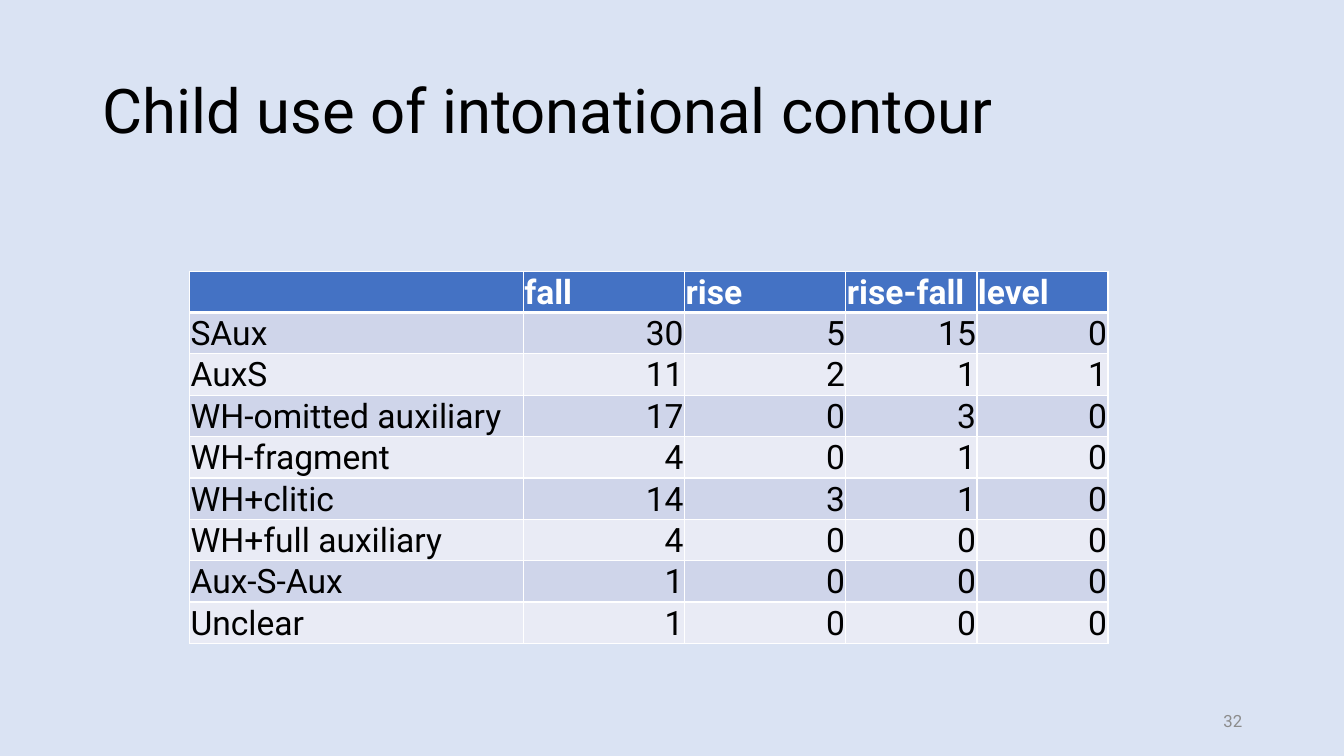
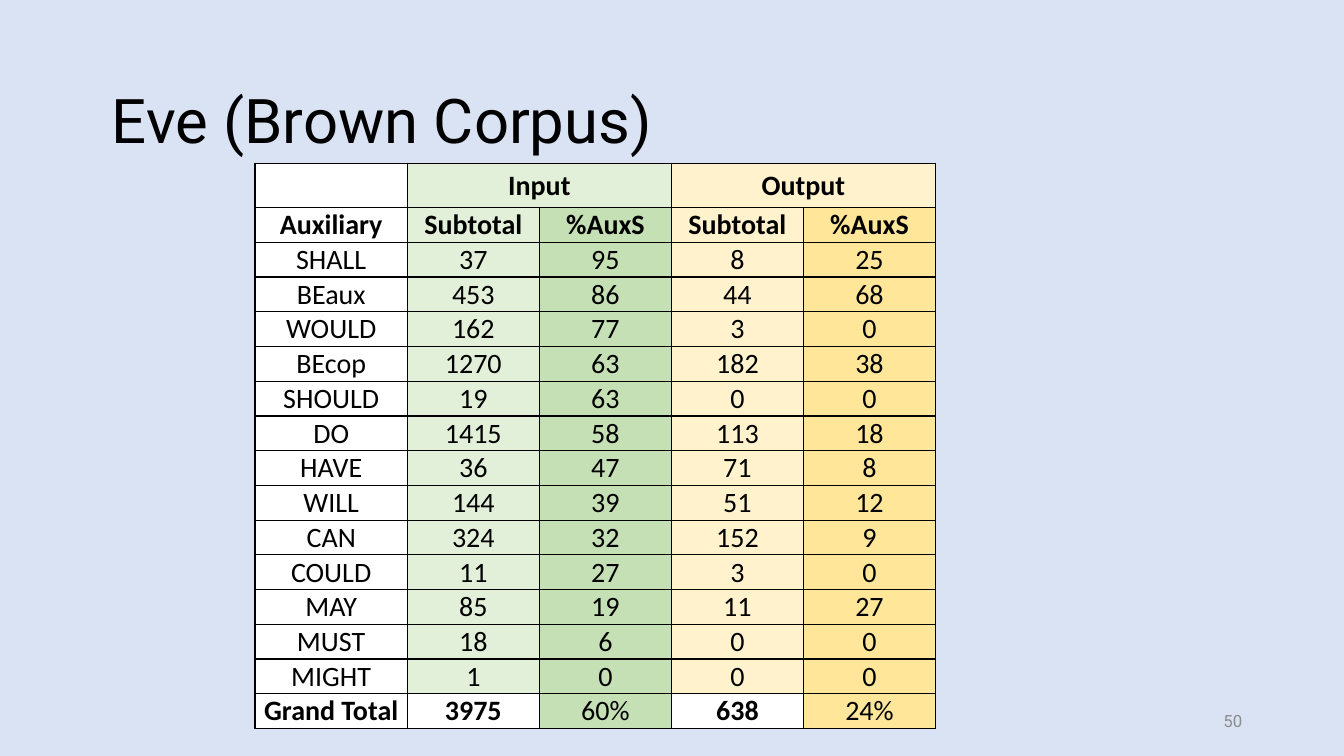
from lxml import etree
from pptx import Presentation
from pptx.dml.color import RGBColor
from pptx.enum.text import MSO_ANCHOR as ANCHOR, MSO_AUTO_SIZE as AUTO, PP_ALIGN as ALIGN
from pptx.oxml.ns import qn
from pptx.util import Inches, Pt

BLACK = RGBColor(0x00, 0x00, 0x00)
WHITE = RGBColor(0xFF, 0xFF, 0xFF)
GREY = RGBColor(0x8C, 0x8C, 0x8C)
SKY = RGBColor(0xDA, 0xE3, 0xF3)
BLUE = RGBColor(0x44, 0x72, 0xC4)
BAND_DARK = RGBColor(0xCF, 0xD5, 0xEA)
BAND_LIGHT = RGBColor(0xE9, 0xEB, 0xF5)
GREEN_LIGHT = RGBColor(0xE2, 0xF0, 0xD9)
GREEN = RGBColor(0xC5, 0xE0, 0xB4)
GOLD_LIGHT = RGBColor(0xFF, 0xF2, 0xCC)
GOLD = RGBColor(0xFF, 0xE6, 0x99)

CONTOURS = [
    ("", "fall", "rise", "rise-fall", "level"),
    ("SAux", 30, 5, 15, 0),
    ("AuxS", 11, 2, 1, 1),
    ("WH-omitted auxiliary", 17, 0, 3, 0),
    ("WH-fragment", 4, 0, 1, 0),
    ("WH+clitic", 14, 3, 1, 0),
    ("WH+full auxiliary", 4, 0, 0, 0),
    ("Aux-S-Aux", 1, 0, 0, 0),
    ("Unclear", 1, 0, 0, 0),
]
AUXILIARIES = [
    ("", "Input", "", "Output", ""),
    ("Auxiliary", "Subtotal", "%AuxS", "Subtotal", "%AuxS"),
    ("SHALL", 37, 95, 8, 25),
    ("BEaux", 453, 86, 44, 68),
    ("WOULD", 162, 77, 3, 0),
    ("BEcop", 1270, 63, 182, 38),
    ("SHOULD", 19, 63, 0, 0),
    ("DO", 1415, 58, 113, 18),
    ("HAVE", 36, 47, 71, 8),
    ("WILL", 144, 39, 51, 12),
    ("CAN", 324, 32, 152, 9),
    ("COULD", 11, 27, 3, 0),
    ("MAY", 85, 19, 11, 27),
    ("MUST", 18, 6, 0, 0),
    ("MIGHT", 1, 0, 0, 0),
    ("Grand Total", 3975, "60%", 638, "24%"),
]


def add_text(tf, text, font, size, color, align, bold=False):
    p = tf.paragraphs[0]
    p.alignment = align
    if text != "":
        r = p.add_run()
        r.text = str(text)
        r.font.name, r.font.size, r.font.bold = font, Pt(size), bold
        r.font.color.rgb = color
    return p


def style_cell(cell, fill, line, top=1, bottom=1):
    tcPr = cell._tc.get_or_add_tcPr()
    for side, width in (("L", 1), ("R", 1), ("T", top), ("B", bottom)):
        ln = etree.SubElement(tcPr, qn("a:ln" + side), w=str(Pt(width)))
        solid = etree.SubElement(ln, qn("a:solidFill"))
        etree.SubElement(solid, qn("a:srgbClr"), val=str(line))
    cell.fill.solid()
    cell.fill.fore_color.rgb = fill


prs = Presentation()
prs.slide_width, prs.slide_height = Inches(13.33), Inches(7.5)
bg = prs.slide_master.background.fill
bg.solid()
bg.fore_color.rgb = SKY

# Slides with title, page number and an empty table
tables = []
for title, x, y, number, data, at, widths, heights in (
    ("Child use of intonational contour", 0.92, 0.4, 32, CONTOURS,
     (1.88, 2.69), (3.31, 1.6, 1.6, 1.3, 1.3), [0.4] * 9),
    ("Eve (Brown Corpus)", 1.01, 0.5, 50, AUXILIARIES,
     (2.53, 1.62), [1.51] + [1.31] * 4, [0.44] + [5.17 / 15] * 15),
):
    s = prs.slides.add_slide(prs.slide_layouts[5])
    sp = s.shapes.title
    sp.left, sp.top, sp.width, sp.height = map(Inches, (x, y, 11.5, 1.45))
    tf = sp.text_frame
    tf.auto_size, tf.vertical_anchor = AUTO.NONE, ANCHOR.MIDDLE
    add_text(tf, title, "Roboto", 44, BLACK, ALIGN.LEFT).line_spacing = 0.9

    tf = s.shapes.add_textbox(*map(Inches, (9.42, 6.95, 3, 0.4))).text_frame
    tf.word_wrap, tf.vertical_anchor = True, ANCHOR.MIDDLE
    add_text(tf, number, "Roboto", 12, GREY, ALIGN.RIGHT)

    size = (sum(widths), sum(heights))
    table = s.shapes.add_table(len(data), 5, *map(Inches, at + size)).table
    table.first_row = table.horz_banding = False
    for col, width in zip(table.columns, widths):
        col.width = Inches(width)
    for row, height in zip(table.rows, heights):
        row.height = Inches(height)
    tables.append(table)
contour_table, aux_table = tables

# Contour table: blue header, banded rows
for i, row in enumerate(CONTOURS):
    header = i == 0
    fill = BLUE if header else BAND_DARK if i % 2 else BAND_LIGHT
    for j, value in enumerate(row):
        cell = contour_table.cell(i, j)
        style_cell(cell, fill, WHITE, top=3 if i == 1 else 1, bottom=3 if header else 1)
        cell.margin_left = cell.margin_right = cell.margin_top = Inches(0.01)
        cell.margin_bottom = 0
        cell.vertical_anchor = ANCHOR.BOTTOM
        add_text(cell.text_frame, value, "Roboto", 24, WHITE if header else BLACK,
                 ALIGN.LEFT if header or j == 0 else ALIGN.RIGHT, header)

# Auxiliary table: green input and gold output columns
last = len(AUXILIARIES) - 1
for i, row in enumerate(AUXILIARIES):
    fills = [WHITE, GREEN_LIGHT, GREEN, GOLD_LIGHT, GOLD]
    if i == 0:
        fills[2], fills[4] = GREEN_LIGHT, GOLD_LIGHT
    elif i == last:
        fills[1] = fills[3] = WHITE
    for j, value in enumerate(row):
        cell = aux_table.cell(i, j)
        style_cell(cell, fills[j], BLACK)
        if i > 0:
            cell.margin_left = cell.margin_right = cell.margin_top = cell.margin_bottom = 0
            cell.vertical_anchor = ANCHOR.BOTTOM
        bold = i < 2 or (i == last and fills[j] == WHITE)
        add_text(cell.text_frame, value, "Calibri", 20, BLACK, ALIGN.CENTER, bold)
for j in (1, 3):
    aux_table.cell(0, j).merge(aux_table.cell(0, j + 1))

prs.save("out.pptx")
